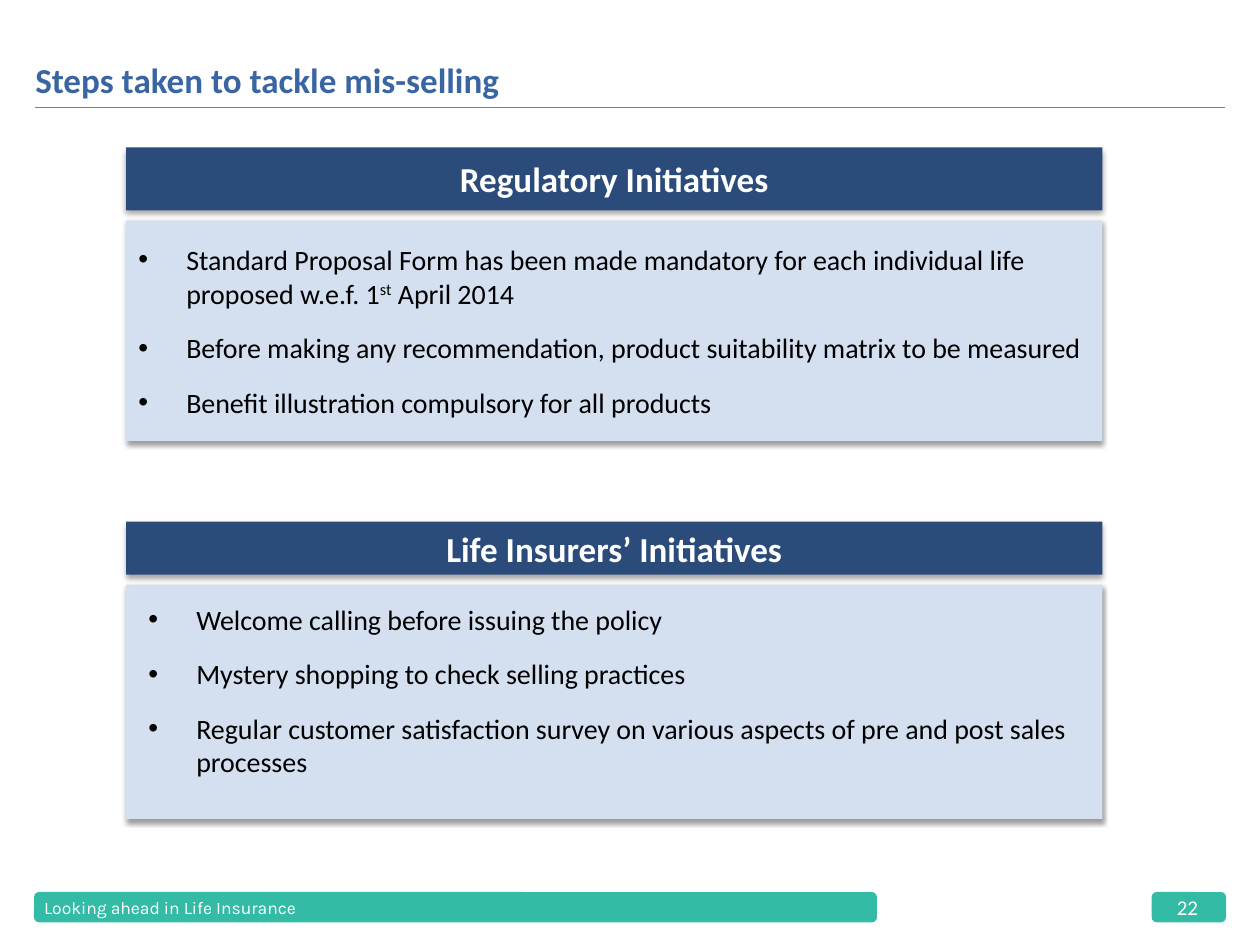
from lxml import etree
from pptx import Presentation
from pptx.dml.color import RGBColor
from pptx.enum.shapes import MSO_CONNECTOR, MSO_SHAPE
from pptx.enum.text import MSO_ANCHOR, PP_ALIGN
from pptx.oxml import parse_xml
from pptx.oxml.ns import nsdecls, qn
from pptx.util import Inches, Pt

NAVY = RGBColor(0x2B, 0x4C, 0x7A)
PALE = RGBColor(0xD4, 0xE0, 0xF0)
BLUE = RGBColor(0x39, 0x65, 0xA2)
TEAL = RGBColor(0x33, 0xBB, 0xA6)
GREY = RGBColor(0x80, 0x80, 0x80)
WHITE = RGBColor(0xFF, 0xFF, 0xFF)
BLACK = RGBColor(0, 0, 0)

LEFT, WIDTH = 1, 7.75
RULES = [
    ("Standard Proposal Form has been made mandatory for each individual life "
     "proposed w.e.f. 1", "st", " April 2014"),
    ("Before making any recommendation, product suitability matrix to be measured",),
    ("Benefit illustration compulsory for all products",),
]
STEPS = [
    ("Welcome calling before issuing the policy",),
    ("Mystery shopping to check selling practices",),
    ("Regular customer satisfaction survey on various aspects of pre and post sales "
     "processes",),
]


def style(para, size, color, name="Calibri", bold=False):
    font = para.font
    font.size, font.name, font.bold = Pt(size), name, bold
    font.color.rgb = color


def block(slide, box, fill, kind=MSO_SHAPE.RECTANGLE):
    shape = slide.shapes.add_shape(kind, *map(Inches, box))
    shape.shadow.inherit = False
    shape.fill.solid()
    shape.fill.fore_color.rgb = fill
    shape.line.fill.background()
    return shape


def shade(shape, alpha, dist):
    """Give the shape a soft shadow straight below it."""
    effects = shape._element.spPr.find(qn("a:effectLst"))
    effects.append(parse_xml(
        f'<a:outerShdw {nsdecls("a")} blurRad="{Pt(3.1)}" dist="{Pt(dist)}" '
        f'dir="5400000" algn="t" rotWithShape="0"><a:srgbClr val="000000">'
        f'<a:alpha val="{alpha * 1000}"/></a:srgbClr></a:outerShdw>'))


def label(slide, box, text, anchor, wrap=False, **look):
    frame = slide.shapes.add_textbox(*map(Inches, box)).text_frame
    frame.margin_left = frame.margin_right = 0
    frame.margin_top = frame.margin_bottom = 0
    frame.word_wrap, frame.vertical_anchor = wrap, anchor
    para = frame.paragraphs[0]
    para.text = text
    style(para, **look)


def bullets(frame, items):
    """Each item is a tuple of runs; every second run is superscript."""
    frame.word_wrap = True
    for i, item in enumerate(items):
        para = frame.add_paragraph() if i else frame.paragraphs[0]
        para.alignment = PP_ALIGN.LEFT
        para.space_after = Pt(12)
        props = para._p.get_or_add_pPr()
        props.set("marL", str(Inches(0.38)))
        props.set("indent", str(Inches(-0.38)))
        etree.SubElement(props, qn("a:buFont")).set("typeface", "Arial")
        etree.SubElement(props, qn("a:buChar")).set("char", "•")
        style(para, 16, BLACK)
        for j, text in enumerate(item):
            run = para.add_run()
            run.text = text
            if j % 2:
                run._r.get_or_add_rPr().set("baseline", "30000")


def panel(slide, top, head, body, title):
    """Draw a heading bar over a pale box and return the box."""
    bar = block(slide, (LEFT, top, WIDTH, head), NAVY)
    shade(bar, 35, 1.8)
    frame = bar.text_frame
    frame.margin_left = frame.margin_right = 0
    frame.vertical_anchor = MSO_ANCHOR.MIDDLE
    para = frame.paragraphs[0]
    para.text, para.alignment = title, PP_ALIGN.CENTER
    style(para, 20, WHITE, bold=True)
    pane = block(slide, (LEFT, top + head + 0.08, WIDTH, body), PALE)
    shade(pane, 38, 1.6)
    return pane


def header(slide):
    rule = slide.shapes.add_connector(
        MSO_CONNECTOR.STRAIGHT, *map(Inches, (0.28, 0.85, 9.72, 0.85)))
    rule.line.color.rgb, rule.line.width = GREY, Pt(0.5)
    etree.SubElement(rule._element.spPr, qn("a:effectLst"))
    label(slide, (0.28, 0.09, 9.45, 0.71), "Steps taken to tackle mis-selling",
          MSO_ANCHOR.BOTTOM, wrap=True, size=20, color=BLUE, bold=True)


def footer(slide, top):
    for left, width in ((0.27, 6.69), (9.14, 0.59)):
        block(slide, (left, top, width, 0.24), TEAL, MSO_SHAPE.ROUNDED_RECTANGLE)
    label(slide, (9.34, top + 0.02, 0.2, 0.2), "22", MSO_ANCHOR.MIDDLE,
          size=12, color=WHITE)
    label(slide, (0.35, top + 0.02, 3.15, 0.2), "Looking ahead in Life Insurance",
          MSO_ANCHOR.MIDDLE, size=10, color=WHITE, name="Karla")


def main():
    deck = Presentation()
    deck.slide_width, deck.slide_height = Inches(10), Inches(7.5)
    slide = deck.slides.add_slide(deck.slide_layouts[6])
    footer(slide, 7.08)
    header(slide)

    panel(slide, 4.14, 0.42, 1.86, "Life Insurers’ Initiatives")
    notes = slide.shapes.add_textbox(*map(Inches, (1.08, 4.73, 7.67, 1.51)))
    bullets(notes.text_frame, STEPS)

    pane = panel(slide, 1.17, 0.5, 1.75, "Regulatory Initiatives")
    pane.text_frame.vertical_anchor = MSO_ANCHOR.MIDDLE
    bullets(pane.text_frame, RULES)
    deck.save("out.pptx")


if __name__ == "__main__":
    main()
